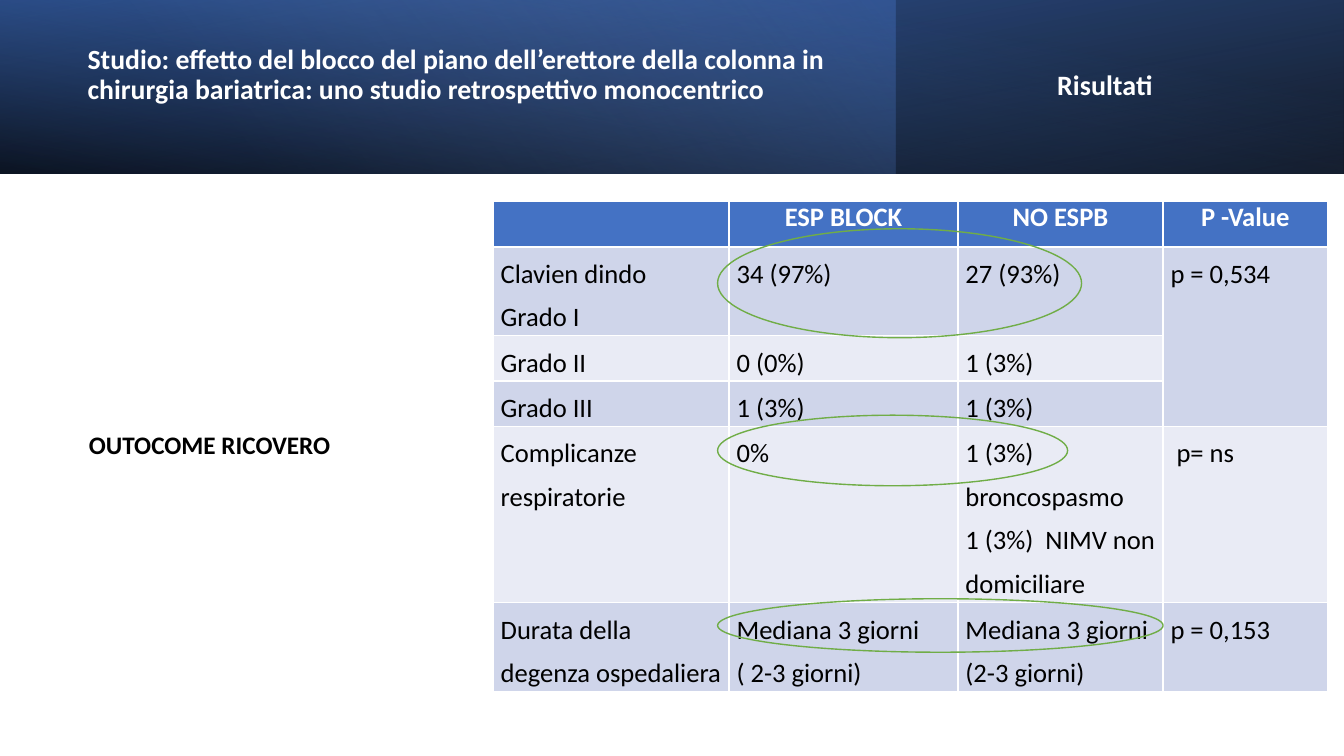
"""Build the results slide on hospital stay outcomes after ESP block."""
from lxml import etree
from pptx import Presentation
from pptx.dml.color import RGBColor
from pptx.enum.shapes import MSO_SHAPE
from pptx.enum.text import MSO_ANCHOR, PP_ALIGN
from pptx.oxml.ns import qn
from pptx.util import Pt

RECT, OVAL = MSO_SHAPE.RECTANGLE, MSO_SHAPE.OVAL
MIDDLE, CENTER, LEFT = MSO_ANCHOR.MIDDLE, PP_ALIGN.CENTER, PP_ALIGN.LEFT

FONT = "Calibri"
COLORS = {"white": "FFFFFF", "black": "000000", "blue": "4472C4", "navy": "2F5597",
          "sky": "8FAADC", "band": "CFD5EA", "pale": "E9EBF5", "green": "70AD47"}

TITLE = ("Studio: effetto del blocco del piano dell’erettore della colonna in "
         "chirurgia bariatrica: uno studio retrospettivo monocentrico")
SECTION = "Risultati"
TOPIC = "OUTOCOME RICOVERO"

SLIDE_W, SLIDE_H, BAND_H = 960, 540, 124
# width, rotation, flipped, angle, stops as (position, colour, opacity)
BANDS = [
    (SLIDE_W, 180, True, 100, [(0, "black", 96), (100, "navy", 100)]),
    (640, 0, False, 140, [(0, "blue", 41), (74, "sky", 0)]),
    (SLIDE_W, 0, True, 260, [(0, "black", 63), (78, "blue", 15)]),
]

TABLE_LEFT, TABLE_TOP = 352.3, 144
COL_WIDTHS = [168.5, 163.5, 146.5, 117.5]
ROW_HEIGHTS = [32.4, 63.4, 32.4, 32.4, 126, 63.4]
ROWS = [
    ["", "ESP BLOCK", "NO ESPB", "P -Value"],
    ["Clavien dindo\nGrado I", "34 (97%)", "27 (93%)", "p = 0,534"],
    ["Grado II", "0 (0%)", "1 (3%)", ""],
    ["Grado III", "1 (3%)", "1 (3%)", ""],
    ["Complicanze respiratorie", "0%",
     "1 (3%) broncospasmo\n1 (3%)  NIMV non domiciliare", "\u00a0p= ns"],
    ["Durata della degenza ospedaliera", "Mediana 3 giorni\n( 2-3 giorni)",
     "Mediana 3 giorni (2-3 giorni)", "p = 0,153"],
]

RING_LEFT = 512.6
RINGS = [(163.4, 260, 77.8), (296.6, 250, 50.4), (427.7, 318.2, 38.2)]


def rgb(name):
    return RGBColor.from_string(COLORS[name])


def write(tf, text, size, color, bold=True, align=LEFT, spacing=None, before=None):
    tf.word_wrap = True
    tf.text = text
    for p in tf.paragraphs:
        p.alignment = align
        if spacing:
            p.line_spacing = spacing
        if before:
            p.space_before = Pt(before)
        for r in p.runs:
            r.font.name, r.font.size, r.font.bold = FONT, Pt(size), bold
            r.font.color.rgb = rgb(color)


def add_band(s, width, rotation, flipped, angle, stops):
    sp = s.shapes.add_shape(RECT, 0, 0, Pt(width), Pt(BAND_H))
    sp.shadow.inherit = False
    sp.line.fill.background()
    sp.rotation = rotation
    if flipped:
        sp._element.spPr.find(qn("a:xfrm")).set("flipH", "1")
    sp.fill.gradient()
    sp.fill.gradient_angle = 360 - angle
    for stop, (position, color, _) in zip(sp.fill.gradient_stops, stops):
        stop.position = position / 100
        stop.color.rgb = rgb(color)
    tags = sp._element.spPr.findall(".//" + qn("a:srgbClr"))
    for tag, (_, _, opacity) in zip(tags, stops):
        etree.SubElement(tag, qn("a:alpha")).set("val", str(opacity * 1000))


def add_text(s, box, *args, **kwargs):
    tf = s.shapes.add_textbox(*map(Pt, box)).text_frame
    write(tf, *args, **kwargs)
    return tf


def add_results(s):
    table = s.shapes.add_table(len(ROWS), len(COL_WIDTHS), Pt(TABLE_LEFT), Pt(TABLE_TOP),
                               Pt(sum(COL_WIDTHS)), Pt(sum(ROW_HEIGHTS))).table
    for col, width in zip(table.columns, COL_WIDTHS):
        col.width = Pt(width)
    for i, (row, height) in enumerate(zip(ROWS, ROW_HEIGHTS)):
        table.rows[i].height = Pt(height)
        for j, text in enumerate(row):
            cell = table.cell(i, j)
            cell.margin_left = cell.margin_right = Pt(5.4)
            cell.margin_top = cell.margin_bottom = 0
            cell.fill.solid()
            cell.fill.fore_color.rgb = rgb("blue" if i == 0 else "band" if i % 2 else "pale")
            if i == 0:
                write(cell.text_frame, text, 19, "white", align=CENTER, before=12)
            else:
                write(cell.text_frame, text, 19, "black", bold=False, spacing=1.35)
    table.cell(1, 3).merge(table.cell(3, 3))


def main():
    prs = Presentation()
    prs.slide_width, prs.slide_height = Pt(SLIDE_W), Pt(SLIDE_H)
    s = prs.slides.add_slide(prs.slide_layouts[5])
    for band in BANDS:
        add_band(s, *band)

    title = s.shapes.title
    title.left, title.top, title.width, title.height = map(Pt, (55.4, 19.4, 555.8, 91.4))
    tf = title.text_frame
    write(tf, TITLE, 19.8, "white", spacing=0.9)
    tf.vertical_anchor = MIDDLE
    tf.margin_bottom = Pt(25.4)
    s.shapes._spTree.append(title._element)

    tf = add_text(s, (666.7, 27.4, 254.9, 69.1), SECTION, 20, "white",
                  align=CENTER, spacing=0.9)
    tf.vertical_anchor = MIDDLE
    tf.margin_right = Pt(17)

    add_results(s)
    add_text(s, (11.5, 303.1, 276.5, 28.8), TOPIC, 18, "black", align=CENTER)

    for top, width, height in RINGS:
        ring = s.shapes.add_shape(OVAL, Pt(RING_LEFT), Pt(top), Pt(width), Pt(height))
        ring.shadow.inherit = False
        ring.fill.background()
        ring.line.color.rgb = rgb("green")
        ring.line.width = Pt(1)

    prs.save("out.pptx")


if __name__ == "__main__":
    main()
